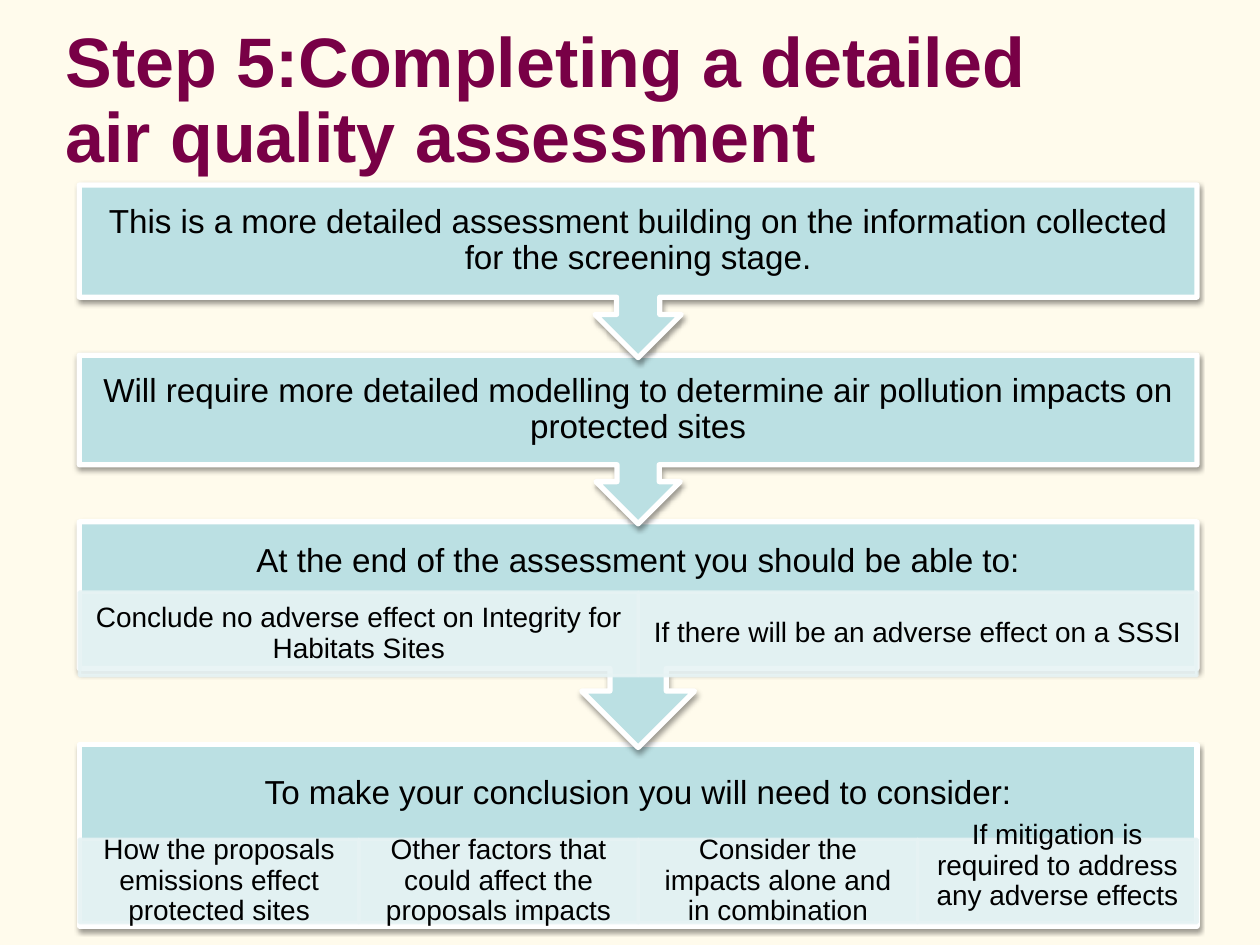
from lxml.etree import SubElement
from pptx import Presentation
from pptx.dml.color import RGBColor
from pptx.enum.shapes import MSO_SHAPE as Shape
from pptx.enum.text import MSO_ANCHOR as Anchor, MSO_AUTO_SIZE as AutoSize, PP_ALIGN as Align
from pptx.oxml.ns import qn
from pptx.util import Cm, Pt

# Lengths in centimetres
LEFT, WIDTH = 1.6, 22.53
CELL_HEIGHT = 1.68
CALLOUT_BODY = 0.65  # share of a callout's height above its arrow
STAGE_INSET = 0.38
CELL_INSETS = (0.3, 0.05, 0.3, 0.05)

BACKGROUND, PLUM, TEAL, PALE_TEAL = "FFFBEC", "780046", "BBE0E3", "E7F3F4"
WHITE, BLACK = "FFFFFF", "000000"

# Stage: text, top, height, heading height, top of the cells within it, cells
STAGES = [
    ("This is a more detailed assessment building on the information collected "
     "for the screening stage.", 3.73, 3.48, 2.26, 0, []),
    ("Will require more detailed modelling to determine air pollution impacts on "
     "protected sites", 7.16, 3.4, 2.21, 0, []),
    ("At the end of the assessment you should be able to:", 10.52, 4.55, 1.6, 1.42,
     ["Conclude no adverse effect on Integrity for Habitats Sites",
      "If there will be an adverse effect on a SSSI"]),
    ("To make your conclusion you will need to consider:", 15.01, 3.66, 1.98, 1.91,
     ["How the proposals emissions effect protected sites",
      "Other factors that could affect the proposals impacts",
      "Consider the impacts alone and in combination",
      "If mitigation is required to address any adverse effects"]),
]
RAISED_CELL, RAISED_INSET = STAGES[-1][-1][-1], 0.65


def color(value):
    return RGBColor.from_string(value)


def write(frame, text, size, ink, align=Align.CENTER, bold=False):
    frame.word_wrap = True
    frame.auto_size = AutoSize.NONE
    frame.vertical_anchor = Anchor.MIDDLE
    frame.text = text
    paragraph = frame.paragraphs[0]
    paragraph.alignment = align
    paragraph.line_spacing = 0.9
    paragraph.space_before = Pt(0)
    font = paragraph.font
    font.name, font.size, font.bold = "Arial", Pt(size), bold
    font.color.rgb = color(ink)


def set_insets(frame, left, top, right, bottom):
    frame.margin_left, frame.margin_top = Cm(left), Cm(top)
    frame.margin_right, frame.margin_bottom = Cm(right), Cm(bottom)


def add_panel(slide, preset, left, top, width, height, fill, line, line_width):
    panel = slide.shapes.add_shape(preset, Cm(left), Cm(top), Cm(width), Cm(height))
    panel.shadow.inherit = False
    panel.fill.solid()
    panel.fill.fore_color.rgb = color(fill)
    panel.line.color.rgb = color(line)
    panel.line.width = Pt(line_width)
    return panel


def set_alpha(element, percent):
    for tint in element.iter(qn("a:srgbClr")):
        SubElement(tint, qn("a:alpha"), val=str(percent * 1000))


def add_soft_shadow(panel):
    effects = panel._element.spPr.find(qn("a:effectLst"))
    shadow = SubElement(effects, qn("a:outerShdw"), blurRad=str(Pt(3.1)),
                        dist=str(Pt(1.6)), dir="5400000", rotWithShape="0")
    SubElement(shadow, qn("a:srgbClr"), val=BLACK)
    set_alpha(shadow, 38)


def add_cell(slide, text, left, top, width):
    cell = add_panel(slide, Shape.RECTANGLE, left, top, width, CELL_HEIGHT,
                     PALE_TEAL, PALE_TEAL, 2)
    set_alpha(cell._element.spPr, 90)
    write(cell.text_frame, text, 16, BLACK)
    set_insets(cell.text_frame, *CELL_INSETS)
    if text == RAISED_CELL:
        cell.text_frame.margin_bottom = Cm(RAISED_INSET)


def add_stage(slide, text, top, height, heading, cell_top, cells, is_last):
    preset = Shape.RECTANGLE if is_last else Shape.DOWN_ARROW_CALLOUT
    body = height if is_last else height * CALLOUT_BODY
    stage = add_panel(slide, preset, LEFT, top, WIDTH, height, TEAL, WHITE, 3)
    add_soft_shadow(stage)
    write(stage.text_frame, text, 19, BLACK)
    # The bottom inset keeps the heading above the cells
    set_insets(stage.text_frame, STAGE_INSET, STAGE_INSET, STAGE_INSET,
               STAGE_INSET + body - heading)
    for column, label in enumerate(cells):
        width = WIDTH / len(cells)
        add_cell(slide, label, LEFT + column * width, top + cell_top, width)


def add_title(slide, text):
    title = slide.shapes.title
    title.left, title.top = Cm(1.07), Cm(1.12)
    title.width, title.height = Cm(21.95), Cm(1.88)
    write(title.text_frame, text, 40, PLUM, Align.LEFT, bold=True)


def main():
    deck = Presentation()
    deck.slide_width, deck.slide_height = Cm(25.4), Cm(19.05)
    slide = deck.slides.add_slide(deck.slide_layouts[5])
    slide.background.fill.solid()
    slide.background.fill.fore_color.rgb = color(BACKGROUND)

    add_title(slide, "Step 5:Completing a detailed air quality assessment")
    # Last stage first, so that each arrow tip lies over the next stage
    for stage in reversed(STAGES):
        add_stage(slide, *stage, is_last=stage is STAGES[-1])

    deck.save("out.pptx")


if __name__ == "__main__":
    main()
